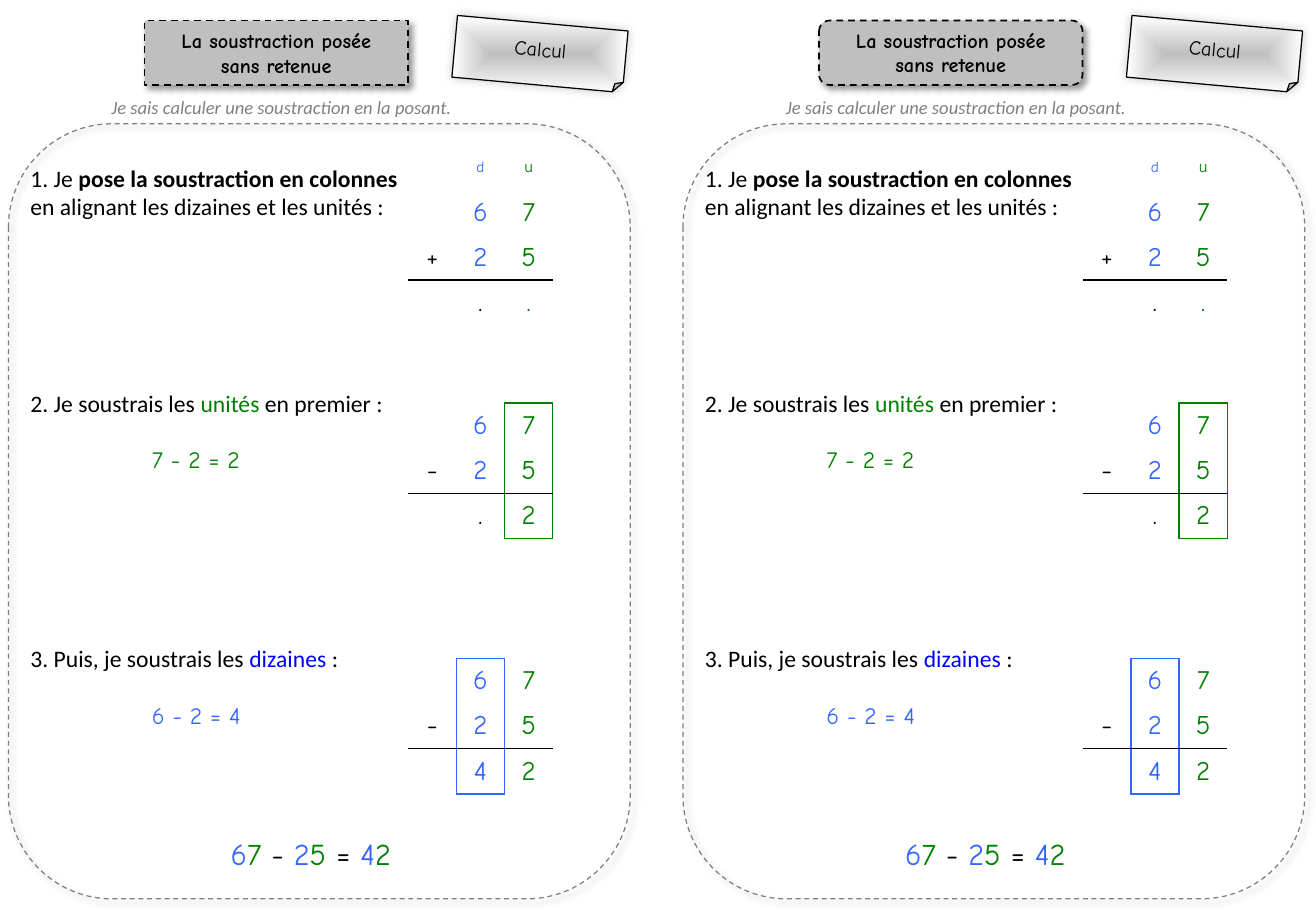
from lxml import etree
from pptx import Presentation
from pptx.dml import color
from pptx.enum import dml, shapes, text
from pptx.oxml import ns, parse_xml
from pptx.util import Pt

BLACK, BLUE, GREEN, GREY = "000000", "3366FF", "008000", "BFBFBF"
COLUMN_COLOURS = (BLACK, BLUE, GREEN)
HAND, PLAIN = "Comic Neue", "Calibri"
CARD_STEP = 399.8
COLUMN_WIDTH, ROW_HEIGHT = 28.6, 26.8
NO_GRID_STYLE = "{2D5ABB26-0587-4C30-8999-92F81FD0307C}"
BADGE_SHADOW = dict(alpha=40, blur=4, distance=3, angle=45)
LABEL_SHADOW = dict(alpha=20, blur=6, distance=0, angle=315)


def rgb(value):
    return color.RGBColor.from_string(value)


def set_attributes(target, **values):
    for name, value in values.items():
        setattr(target, name, value)


def place(shape, box, left, top, width, height):
    set_attributes(shape, left=Pt(box[0] + left), top=Pt(box[1] + top),
                   width=Pt(width), height=Pt(height))


def add_run(paragraph, content, colour=BLACK, size=14, font=PLAIN, **styles):
    run = paragraph.add_run()
    run.text = content
    set_attributes(run.font, size=Pt(size), name=font, **styles)
    run.font.color.rgb = rgb(colour)


def draw_line(shape, colour, width, dashed=True):
    shape.line.color.rgb = rgb(colour)
    shape.line.width = Pt(width)
    if dashed:
        shape.line.dash_style = dml.MSO_LINE.DASH


def add_shadow(shape, alpha, blur, distance, angle):
    shape.shadow.inherit = False
    effects = shape._element.spPr.find(ns.qn("a:effectLst"))
    effects.append(parse_xml(
        f'<a:outerShdw {ns.nsdecls("a")} blurRad="{Pt(blur)}" dist="{Pt(distance)}" '
        f'dir="{angle * 60000}" algn="tl" rotWithShape="0"><a:srgbClr val="{BLACK}">'
        f'<a:alpha val="{alpha * 1000}"/></a:srgbClr></a:outerShdw>'))


def fill_from_centre(shape, inner, outer):
    shape.fill.gradient()
    for stop, colour in zip(shape.fill.gradient_stops, (inner, outer)):
        stop.color.rgb = rgb(colour)
    gradient = shape._element.spPr.find(ns.qn("a:gradFill"))
    gradient.replace(gradient.find(ns.qn("a:lin")), parse_xml(
        f'<a:path {ns.nsdecls("a")} path="shape">'
        '<a:fillToRect l="50000" t="50000" r="50000" b="50000"/></a:path>'))


def add_heading(slide, box, title):
    if title is None:
        badge = slide.shapes.add_shape(shapes.MSO_SHAPE.ROUNDED_RECTANGLE, 0, 0, 0, 0)
        place(badge, box, 85.7, 12.2, 156.2, 38.2)
    else:
        badge = title
        place(badge, box, 85.7, 12.2, 156.2, 38.2)
        badge._element.spPr.append(parse_xml(
            f'<a:prstGeom {ns.nsdecls("a")} prst="roundRect"><a:avLst/></a:prstGeom>'))
    badge.fill.solid()
    badge.fill.fore_color.rgb = rgb(GREY)
    draw_line(badge, BLACK, 1)
    add_shadow(badge, **BADGE_SHADOW)
    frame = badge.text_frame
    set_attributes(frame, word_wrap=True, auto_size=text.MSO_AUTO_SIZE.NONE,
                   vertical_anchor=text.MSO_ANCHOR.MIDDLE)
    for index, line in enumerate(("La soustraction posée", "sans retenue")):
        paragraph = frame.add_paragraph() if index else frame.paragraphs[0]
        paragraph.alignment = text.PP_ALIGN.CENTER
        add_run(paragraph, line, size=12, font=HAND, bold=True)


def add_label(slide, box):
    label = slide.shapes.add_shape(shapes.MSO_SHAPE.FOLDED_CORNER, 0, 0, 0, 0)
    place(label, box, 269.3, 13.7, 101.5, 36.7)
    label.rotation = 5.2
    fill_from_centre(label, GREY, "FFFFFF")
    draw_line(label, BLACK, 0.75, dashed=False)
    add_shadow(label, **LABEL_SHADOW)
    label.text_frame.vertical_anchor = text.MSO_ANCHOR.MIDDLE
    paragraph = label.text_frame.paragraphs[0]
    paragraph.alignment = text.PP_ALIGN.CENTER
    add_run(paragraph, "Calcul", size=12, font=HAND)


def add_frame(slide, box):
    outline = slide.shapes.add_shape(shapes.MSO_SHAPE.ROUNDED_RECTANGLE, 0, 0, 0, 0)
    place(outline, box, 5, 73.4, 368.6, 459.4)
    outline.fill.background()
    draw_line(outline, "7F7F7F", 0.75)
    add_shadow(outline, **BADGE_SHADOW)


def add_caption(slide, box, position, runs):
    caption = slide.shapes.add_textbox(0, 0, 0, 0)
    place(caption, box, *position)
    caption.text_frame.word_wrap = True
    for content, styles in runs:
        add_run(caption.text_frame.paragraphs[0], content, **styles)


def fill_steps(body, box):
    place(body, box, 10.8, 93.6, 236.9, 363.6)
    frame = body.text_frame
    set_attributes(frame, word_wrap=True, auto_size=text.MSO_AUTO_SIZE.NONE,
                   vertical_anchor=text.MSO_ANCHOR.TOP)
    steps = (
        (0, 0, (("1. Je ", {}), ("pose la soustraction en colonnes ", dict(bold=True)),
                ("en alignant les dizaines et les unités :", {}))),
        (99.5, 0, (("2. Je soustrais les ", {}), ("unités ", dict(colour=GREEN)),
                   ("en premier :", {}))),
        (16.5, 72, (("7 - 2 = 2", dict(colour=GREEN, font=HAND)),)),
        (101.5, 0, (("3. Puis, je soustrais les ", {}), ("dizaines", dict(colour="0000FF")),
                    (" :", {}))),
        (16.5, 72, (("6 - 2 = 4", dict(colour=BLUE, font=HAND)),)),
    )
    for index, (gap, indent, runs) in enumerate(steps):
        paragraph = frame.add_paragraph() if index else frame.paragraphs[0]
        properties = paragraph._p.get_or_add_pPr()
        properties.set("marL", str(Pt(indent)))
        properties.set("indent", "0")
        etree.SubElement(properties, ns.qn("a:buNone"))
        set_attributes(paragraph, space_before=Pt(gap), space_after=Pt(0))
        for content, styles in runs:
            add_run(paragraph, content, **styles)


def add_borders(cell, borders):
    properties = cell._tc.get_or_add_tcPr()
    drawn = [(side, colour) for side, colour in borders if colour]
    for index, (side, colour) in enumerate(drawn):
        properties.insert(index, parse_xml(
            f'<a:ln{side} {ns.nsdecls("a")} w="{Pt(1)}"><a:solidFill>'
            f'<a:srgbClr val="{colour}"/></a:solidFill></a:ln{side}>'))


def add_operation(slide, box, top, rows, highlight=None):
    last = len(rows) - 1
    graphic = slide.shapes.add_table(len(rows), 3, Pt(box[0] + 241.9), Pt(box[1] + top),
                                     Pt(3 * COLUMN_WIDTH), Pt(len(rows) * ROW_HEIGHT))
    table = graphic.table
    set_attributes(table, first_row=False, horz_banding=False)
    table._tbl.tblPr.find(ns.qn("a:tableStyleId")).text = NO_GRID_STYLE
    for column in table.columns:
        column.width = Pt(COLUMN_WIDTH)
    box_colour = None if highlight is None else COLUMN_COLOURS[highlight]
    for row, symbols in enumerate(rows):
        table.rows[row].height = Pt(ROW_HEIGHT)
        for column, symbol in enumerate(symbols):
            cell = table.cell(row, column)
            set_attributes(cell, margin_top=0, margin_bottom=0,
                           vertical_anchor=text.MSO_ANCHOR.MIDDLE)
            cell.fill.background()
            boxed = column == highlight
            add_borders(cell, (
                ("L", box_colour if highlight in (column, column - 1) else None),
                ("R", box_colour if highlight in (column, column + 1) else None),
                ("T", BLACK if row == last else box_colour if boxed and row == 0 else None),
                ("B", BLACK if row == last - 1 else box_colour if boxed and row == last else None)))
            if symbol != " ":
                paragraph = cell.text_frame.paragraphs[0]
                paragraph.alignment = text.PP_ALIGN.CENTER
                colour = BLACK if (symbol, column) == (".", 1) else COLUMN_COLOURS[column]
                add_run(paragraph, symbol, colour, {"d": 9, "u": 10}.get(symbol, 16), HAND)


def add_card(slide, box, body, title=None):
    add_heading(slide, box, title)
    add_label(slide, box)
    add_frame(slide, box)
    add_caption(slide, box, (59, 53.3, 223.2, 20.9), (
        ("Je sais calculer une soustraction en la posant.",
         dict(colour="808080", size=11, italic=True)),))
    fill_steps(body, box)
    add_operation(slide, box, 85.7, (" du", " 67", "+25", " .."))
    add_operation(slide, box, 239, (" 67", "-25", " .2"), highlight=2)
    add_operation(slide, box, 390.2, (" 67", "-25", " 42"), highlight=1)
    equation = (("6", BLUE), ("7 ", GREEN), ("- ", BLACK), ("2", BLUE), ("5 ", GREEN),
                ("= ", BLACK), ("4", BLUE), ("2", GREEN))
    add_caption(slide, box, (129.6, 491.8, 119.5, 28.8), [
        (content, dict(colour=colour, size=18, font=HAND)) for content, colour in equation])


def main():
    presentation = Presentation()
    set_attributes(presentation, slide_width=Pt(780), slide_height=Pt(540))
    slide = presentation.slides.add_slide(presentation.slide_layouts[3])
    add_card(slide, (0, 0), slide.placeholders[1], slide.shapes.title)
    add_card(slide, (CARD_STEP, 0), slide.placeholders[2])
    presentation.save("out.pptx")


if __name__ == "__main__":
    main()
